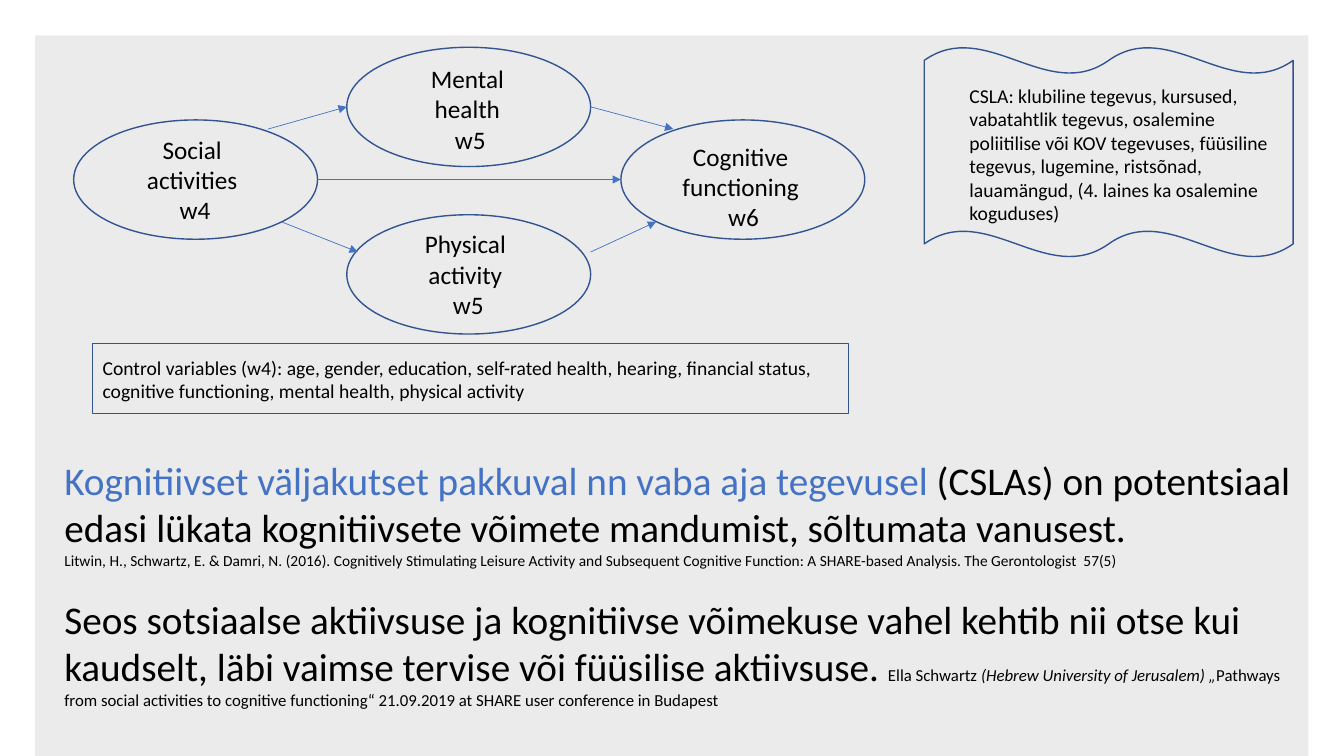
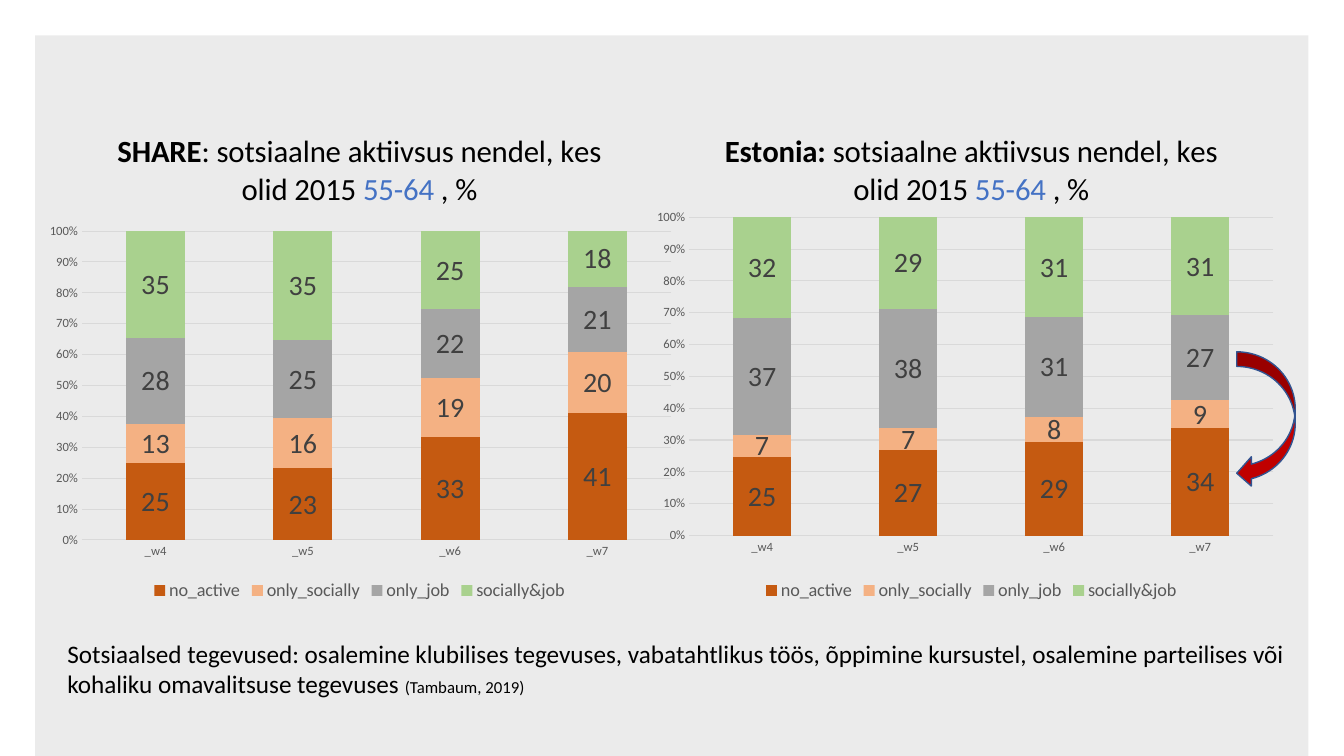
from dataclasses import dataclass
from typing import NamedTuple

from lxml.etree import SubElement
from pptx import Presentation
from pptx.chart.data import CategoryChartData
from pptx.dml.color import RGBColor as RGB
from pptx.enum.chart import XL_CHART_TYPE as ChartType
from pptx.enum.chart import XL_LEGEND_POSITION as LegendPos
from pptx.enum.chart import XL_TICK_MARK as Tick
from pptx.enum.shapes import MSO_CONNECTOR as Connector
from pptx.enum.shapes import MSO_SHAPE as Shape
from pptx.enum.text import MSO_AUTO_SIZE as AutoSize
from pptx.enum.text import PP_ALIGN as Align
from pptx.oxml import parse_xml
from pptx.oxml.ns import nsdecls, qn
from pptx.util import Pt


@dataclass(frozen=True)
class Theme:
    font: str = "Calibri"
    black: RGB = RGB(0, 0, 0)
    accent: RGB = RGB(0x44, 0x72, 0xC4)
    outline: RGB = RGB(0x32, 0x54, 0x91)
    arrow: RGB = RGB(0xC0, 0, 0)
    axis_text: RGB = RGB(0x59, 0x59, 0x59)
    label_text: RGB = RGB(0x40, 0x40, 0x40)
    grid: RGB = RGB(0xD9, 0xD9, 0xD9)
    series: tuple = (RGB(0xC5, 0x5A, 0x11), RGB(0xF4, 0xB1, 0x83),
                     RGB(0xA5, 0xA5, 0xA5), RGB(0xA9, 0xD1, 0x8E))
    panel_alpha: int = 8
    statement: float = 28
    chart_title: float = 22
    data_label: float = 20
    body: float = 18
    small: float = 14
    legend: float = 13
    source: float = 12
    reference: float = 11
    chart_base: float = 10
    axis: float = 9


T = Theme()


class Box(NamedTuple):
    x: float
    y: float
    w: float
    h: float

    def emu(self) -> list:
        return [Pt(v) for v in self]


class Run(NamedTuple):
    text: str
    size: float = T.body
    color: RGB = T.black
    italic: bool = False
    bold: bool = False


class Node(NamedTuple):
    oval: Box
    label: Box
    lines: tuple


class Arrow(NamedTuple):
    x1: float
    y1: float
    x2: float
    y2: float


class Panel(NamedTuple):
    x: float
    bold: str
    rest: str
    plot: Box  # fractions of the chart area
    values: tuple


# Shared drawing helpers
def style(font, size: float, color: RGB) -> None:
    font.name = T.font
    font.size = Pt(size)
    font.color.rgb = color


def fill_paragraph(p, runs: list) -> None:
    same = len({r[1:] for r in runs}) == 1
    if same:
        style(p.font, runs[0].size, runs[0].color)
    for item in runs:
        r = p.add_run()
        r.text = item.text
        if not same:
            style(r.font, item.size, item.color)
            r.font.italic = item.italic
            r.font.bold = item.bold


def add_text(s, box: Box, paragraphs: list, align: Align = Align.LEFT) -> None:
    tf = s.shapes.add_textbox(*box.emu()).text_frame
    tf.word_wrap = True
    tf.auto_size = AutoSize.SHAPE_TO_FIT_TEXT
    for i, runs in enumerate(paragraphs):
        p = tf.add_paragraph() if i else tf.paragraphs[0]
        p.alignment = align
        fill_paragraph(p, runs)


def add_outlined(s, kind: Shape, box: Box, fill: RGB | None = None) -> None:
    sp = s.shapes.add_shape(kind, *box.emu())
    sp.shadow.inherit = False
    if fill is None:
        sp.fill.background()
    else:
        sp.fill.solid()
        sp.fill.fore_color.rgb = fill
    sp.line.color.rgb = T.outline
    sp.line.width = Pt(1)


def add_arrow(s, arrow: Arrow) -> None:
    sp = s.shapes.add_connector(Connector.STRAIGHT, *[Pt(v) for v in arrow])
    sp.line.color.rgb = T.accent
    sp.line.width = Pt(0.5)
    props = sp.element.spPr
    SubElement(props.find(qn("a:ln")), qn("a:tailEnd"), type="triangle")
    SubElement(props, qn("a:effectLst"))


def new_slide(prs):
    """Blank slide with the translucent grey panel."""
    s = prs.slides.add_slide(prs.slide_layouts[6])
    sp = s.shapes.add_shape(Shape.RECTANGLE, *Box(25.2, 25.2, 909.4, 514.8).emu())
    sp.shadow.inherit = False
    sp.line.fill.background()
    sp.fill.solid()
    sp.fill.fore_color.rgb = T.black
    color = sp.element.spPr.find(qn("a:solidFill"))[0]
    SubElement(color, qn("a:alpha"), val=str(T.panel_alpha * 1000))
    return s


# Path model
OVAL_W, OVAL_H = 174.2, 85.2
LEFT, MIDDLE, RIGHT = 52.6, 247.7, 443.5
TOP, CENTRE, BOTTOM = 33.8, 85.7, 153.4


def oval(x: float, y: float) -> Box:
    return Box(x, y, OVAL_W, OVAL_H)


NODES = (
    Node(oval(MIDDLE, TOP), Box(281.5, 41.8, 108.7, 72), ("Mental ", "health ", "w5")),
    Node(oval(RIGHT, CENTRE), Box(466.6, 97.2, 128.9, 72),
         ("Cognitive ", "functioning ", "w6")),
    Node(oval(MIDDLE, BOTTOM), Box(283.7, 159.8, 101.5, 72),
         ("Physical ", "activity ", "w5")),
    Node(oval(LEFT, CENTRE), Box(87.1, 92.2, 104.4, 72), ("Social ", "activities ", "w4")),
)
ARROWS = (
    Arrow(LEFT + OVAL_W, 128.2, RIGHT, 128.2),
    Arrow(200.9, 158.4, 255.6, 180),
    Arrow(MIDDLE + OVAL_W, 180, 468.7, 158.4),
    Arrow(191.5, 92.2, MIDDLE, 76.3),
    Arrow(MIDDLE + OVAL_W, 76.3, 481, 92.2),
)


def build_model_slide(prs) -> None:
    s = new_slide(prs)
    for node in NODES:
        add_outlined(s, Shape.OVAL, node.oval)
        add_text(s, node.label, [[Run(line)] for line in node.lines], Align.CENTER)
    for arrow in ARROWS:
        add_arrow(s, arrow)

    # Control variables and activity list
    add_outlined(s, Shape.RECTANGLE, Box(66.2, 245.5, 540, 49.7))
    add_text(s, Box(66.2, 250.6, 578.9, 41), [
        [Run("Control variables (w4): age, gender, education, self-rated health, "
             "hearing, financial status,", T.small)],
        [Run("cognitive functioning, mental health, physical activity", T.small)]])
    add_text(s, Box(685.4, 56.2, 238.3, 108.7), [[Run(
        "CSLA: klubiline tegevus, kursused, vabatahtlik tegevus, osalemine poliitilise "
        "või KOV tegevuses, füüsiline tegevus, lugemine, ristsõnad, lauamängud, "
        "(4. laines ka osalemine koguduses)", T.small)]])
    add_outlined(s, Shape.DOUBLE_WAVE, Box(660.2, 33.8, 263.5, 149.8))

    # Findings with their sources
    add_text(s, Box(38.9, 322.6, 897.8, 88.6), [
        [Run("Kognitiivset väljakutset pakkuval nn vaba aja tegevusel ",
             T.statement, T.accent),
         Run("(CSLAs) on potentsiaal edasi lükata kognitiivsete võimete mandumist, "
             "sõltumata vanusest.", T.statement)],
        [Run("Litwin, H., Schwartz, E. & Damri, N. (2016). Cognitively Stimulating "
             "Leisure Activity and Subsequent Cognitive Function: A SHARE-based "
             "Analysis. The Gerontologist  57(5)", T.reference)]])
    add_text(s, Box(38.9, 421.9, 888.5, 90), [[
        Run("Seos sotsiaalse aktiivsuse ja kognitiivse võimekuse vahel kehtib nii otse "
            "kui kaudselt, läbi vaimse tervise või füüsilise aktiivsuse. ", T.statement),
        Run("Ella Schwartz ", T.source),
        Run("(Hebrew University of Jerusalem) „", T.source, italic=True),
        Run("Pathways from social activities to cognitive functioning“ 21.09.2019 "
            "at SHARE user conference in Budapest", T.source)]])


# Activity charts
WAVES = ("_w4", "_w5", "_w6", "_w7")
GROUPS = ("no_active", "only_socially", "only_job", "socially&job")
PANELS = (
    Panel(25.2, "SHARE", ": ", Box(0.072, 0.24, 0.909, 0.627),
          ((25, 23, 33, 41), (13, 16, 19, 20), (28, 25, 22, 21), (35, 35, 25, 18))),
    Panel(462.2, "Estonia:", " ", Box(0.065, 0.212, 0.901, 0.646),
          ((25, 27, 29, 34), (7, 7, 8, 9), (37, 38, 31, 27), (32, 29, 31, 31))),
)


def set_plot_area(chart, plot: Box) -> None:
    area = chart.element.find(qn("c:chart")).find(qn("c:plotArea"))
    for old in area.findall(qn("c:layout")):
        area.remove(old)
    sizes = "".join(f'<c:{k} val="{v}"/>' for k, v in zip("xywh", plot))
    area.insert(0, parse_xml(
        f'<c:layout {nsdecls("c")}><c:manualLayout><c:layoutTarget val="inner"/>'
        f'<c:xMode val="edge"/><c:yMode val="edge"/>{sizes}'
        "</c:manualLayout></c:layout>"))


def add_activity_chart(s, panel: Panel) -> None:
    data = CategoryChartData(number_format="0")
    data.categories = WAVES
    for name, values in zip(GROUPS, panel.values):
        data.add_series(name, values)
    chart = s.shapes.add_chart(ChartType.COLUMN_STACKED_100,
                               *Box(panel.x, 80.6, 463, 352).emu(), data).chart
    style(chart.font, T.chart_base, T.black)
    set_plot_area(chart, panel.plot)

    # Title and legend
    chart.has_title = True
    chart.chart_title.include_in_layout = False
    size = T.chart_title
    fill_paragraph(chart.chart_title.text_frame.paragraphs[0], [
        Run(panel.bold, size, bold=True),
        Run(f"{panel.rest}sotsiaalne aktiivsus nendel, kes olid 2015 ", size),
        Run("55-64", size, T.accent), Run(" , %", size)])
    chart.has_legend = True
    chart.legend.position = LegendPos.BOTTOM
    chart.legend.include_in_layout = False
    style(chart.legend.font, T.legend, T.axis_text)

    # Axes
    cat, val = chart.category_axis, chart.value_axis
    for axis in (cat, val):
        axis.major_tick_mark = axis.minor_tick_mark = Tick.NONE
        style(axis.tick_labels.font, T.axis, T.axis_text)
    val.has_major_gridlines = True
    val.tick_labels.number_format = "0%"
    val.tick_labels.number_format_is_linked = False
    val.format.line.fill.background()
    for line in (cat.format.line, val.major_gridlines.format.line):
        line.color.rgb = T.grid
        line.width = Pt(0.75)

    # Columns
    plot = chart.plots[0]
    plot.gap_width, plot.overlap = 150, 100
    plot.vary_by_categories = False
    for series, color in zip(plot.series, T.series):
        series.format.fill.solid()
        series.format.fill.fore_color.rgb = color
        series.data_labels.show_value = True
        style(series.data_labels.font, T.data_label, T.label_text)


def build_chart_slide(prs) -> None:
    s = new_slide(prs)
    add_text(s, Box(41, 452.2, 893.5, 51.1), [[
        Run("Sotsiaalsed tegevused: osalemine klubilises tegevuses, vabatahtlikus töös, "
            "õppimine kursustel, osalemine parteilises või kohaliku omavalitsuse "
            "tegevuses "),
        Run("(Tambaum, 2019)", T.source)]])
    for panel in PANELS:
        add_activity_chart(s, panel)
    add_outlined(s, Shape.CURVED_LEFT_ARROW, Box(883.4, 251.3, 41.8, 97.2), T.arrow)


def main() -> None:
    prs = Presentation()
    prs.slide_width, prs.slide_height = Pt(960), Pt(540)
    build_model_slide(prs)
    build_chart_slide(prs)
    prs.save("out.pptx")


if __name__ == "__main__":
    main()
